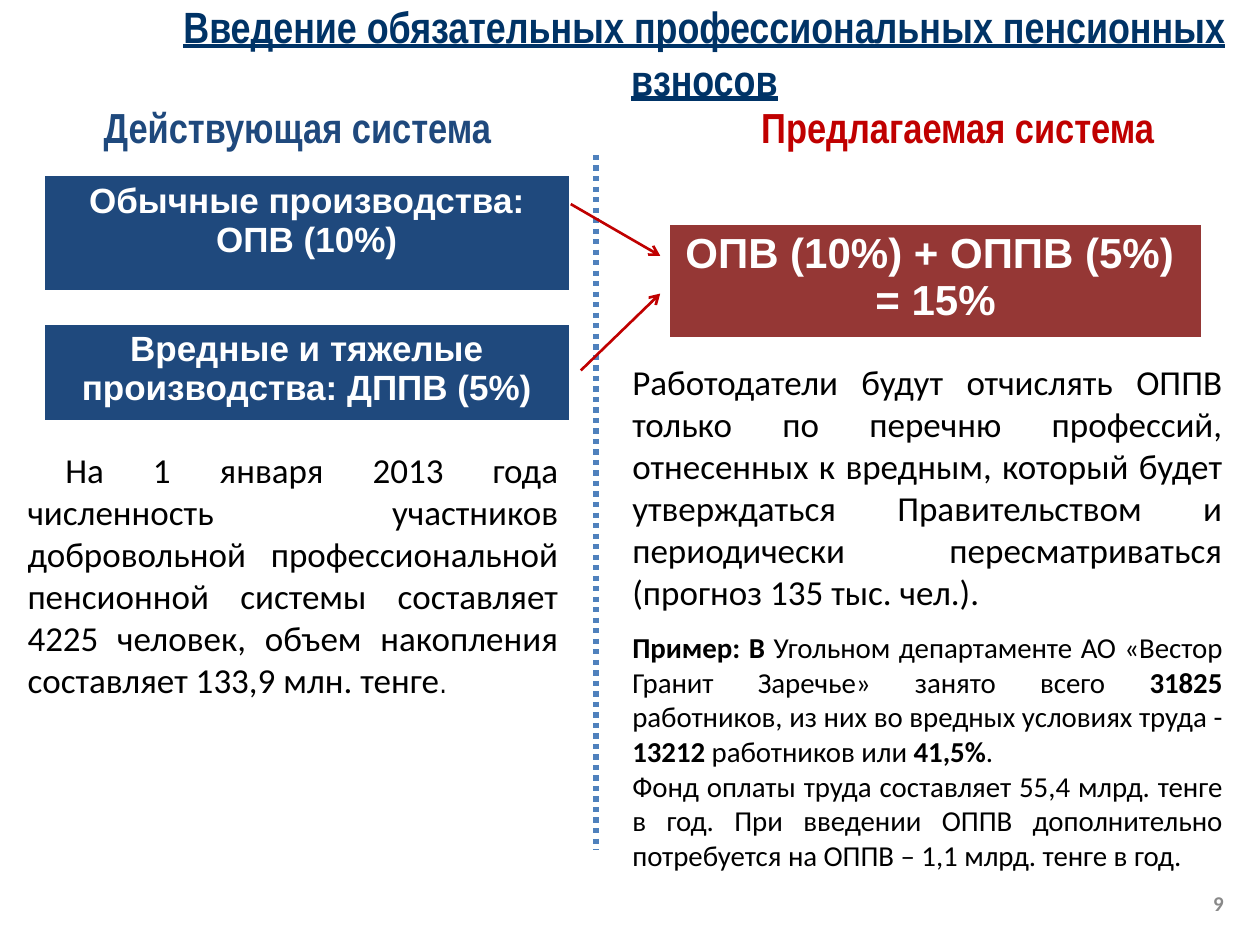
import pptx
import pptx.util
import pptx.oxml.ns
import pptx.dml.color
import pptx.enum.dml
import pptx.enum.shapes
import pptx.enum.text
from lxml import etree

Inches, Pt = pptx.util.Inches, pptx.util.Pt
rgb = pptx.dml.color.RGBColor.from_string
Align = pptx.enum.text.PP_ALIGN
Anchor = pptx.enum.text.MSO_ANCHOR

# Colours and type styles
theme = {
    "navy": "1F497D", "red": "C00000", "brick": "953735", "blue": "4F81BD",
    "title": {"name": "Arial Narrow", "size": Pt(25), "bold": True, "underline": True, "color": "003366"},
    "head": {"name": "Arial Narrow", "size": Pt(24), "bold": True},
    "cell": {"name": "Arial", "size": Pt(20), "bold": True, "color": "FFFFFF"},
    "sum": {"name": "Arial", "size": Pt(24), "bold": True, "color": "FFFFFF"},
    "body": {"name": "Calibri", "size": Pt(20), "color": "000000"},
    "dot": {"name": "Arial Narrow", "size": Pt(18), "color": "000000"},
    "note": {"name": "Calibri", "size": Pt(16.5), "color": "000000"},
    "bold": {"name": "Calibri", "size": Pt(16.5), "bold": True, "color": "000000"},
    "page": {"name": "Calibri", "size": Pt(12), "bold": True, "color": "898989"},
}


def write(par, align, *runs):
    par.alignment = align
    for text, style in runs:
        for row, line in enumerate(text.split("\n")):
            if row:
                par.add_line_break()
            run = par.add_run()
            run.text = line
            for key, value in style.items():
                if key == "color":
                    run.font.color.rgb = rgb(value)
                else:
                    setattr(run.font, key, value)


def add_box(left, top, width, height):
    box = slide.shapes.add_textbox(Inches(left), Inches(top), Inches(width), Inches(height))
    box.text_frame.word_wrap = True
    return box.text_frame


deck = pptx.Presentation()
deck.slide_width, deck.slide_height = Inches(10), Inches(7.5)
slide = deck.slides.add_slide(deck.slide_layouts[5])

# Title
title = slide.shapes.title
title.left, title.top, title.width, title.height = Inches(0), Inches(0.15), Inches(10), Inches(0.53)
frame = title.text_frame
frame.auto_size = pptx.enum.text.MSO_AUTO_SIZE.NONE
frame.vertical_anchor = Anchor.MIDDLE
par = frame.paragraphs[0]
write(par, Align.CENTER,
      ("Введение обязательных профессиональных пенсионных взносов", theme["title"]))
par.space_before = Pt(0)
props = par._p.get_or_add_pPr()
props.set("marL", str(Inches(1.18)))
props.set("indent", "0")

# Column headings
for text, left, width, tone in [
    ("Действующая система", 0.51, 3.7, "navy"),
    ("Предлагаемая система", 5.79, 3.62, "red"),
]:
    frame = add_box(left, 0.76, width, 0.51)
    write(frame.paragraphs[0], Align.CENTER, (text, theme["head"] | {"color": theme[tone]}))

# Left column text
par = add_box(0.12, 3.51, 4.41, 2.12).paragraphs[0]
write(par, Align.JUSTIFY,
      ("На 1 января 2013 года численность участников добровольной профессиональной "
       "пенсионной системы составляет 4225 человек, объем накопления составляет "
       "133,9 млн. тенге", theme["body"]),
      (".", theme["dot"]))
par._p.get_or_add_pPr().set("indent", str(Inches(0.3)))

# Right column text
note, bold = theme["note"], theme["bold"]
frame = add_box(4.92, 2.81, 4.88, 4.2)
write(frame.paragraphs[0], Align.JUSTIFY,
      ("Работодатели будут отчислять ОППВ только по перечню профессий, отнесенных "
       "к вредным, который будет утверждаться Правительством и периодически "
       "пересматриваться (прогноз 135 тыс. чел.).", theme["body"]))
par = frame.add_paragraph()
par.space_before = Pt(10)
write(par, Align.JUSTIFY,
      ("Пример: В ", bold),
      ("Угольном департаменте АО «Вестор Гранит Заречье» занято всего ", note),
      ("31825", bold),
      (" работников, из них во вредных условиях труда - ", note),
      ("13212", bold),
      (" работников или ", note),
      ("41,5%", bold),
      (".", note))
write(frame.add_paragraph(), Align.JUSTIFY,
      ("Фонд оплаты труда составляет 55,4 млрд. тенге в год. При введении ОППВ "
       "дополнительно потребуется на ОППВ – 1,1 млрд. тенге в год.", note))

# Contribution tables, one cell each
for text, left, top, width, height, tone, style in [
    ("Обычные производства: ОПВ (10%)", 0.35, 1.39, 4.17, 0.92, "navy", "cell"),
    ("Вредные и тяжелые производства: ДППВ (5%)", 0.35, 2.57, 4.17, 0.76, "navy", "cell"),
    ("ОПВ (10%) + ОППВ (5%) \n= 15%", 5.31, 1.78, 4.23, 0.87, "brick", "sum"),
]:
    grid = slide.shapes.add_table(1, 1, Inches(left), Inches(top), Inches(width), Inches(height))
    cell = grid.table.cell(0, 0)
    cell.fill.solid()
    cell.fill.fore_color.rgb = rgb(theme[tone])
    write(cell.text_frame.paragraphs[0], Align.CENTER, (text, theme[style]))

# Divider and arrows
for start, end, tone, weight, arrow in [
    ((4.73, 1.23), (4.73, 6.74), "blue", 3, False),
    ((4.61, 2.94), (5.24, 2.33), "red", 1.5, True),
    ((4.53, 1.62), (5.24, 2.03), "red", 1.5, True),
]:
    link = slide.shapes.add_connector(
        pptx.enum.shapes.MSO_CONNECTOR.STRAIGHT, *map(Inches, start + end))
    link.line.color.rgb = rgb(theme[tone])
    link.line.width = Pt(weight)
    props = link._element.spPr
    if arrow:
        tail = etree.SubElement(link.line._get_or_add_ln(), pptx.oxml.ns.qn("a:tailEnd"))
        tail.set("type", "arrow")
    else:
        link.line.dash_style = pptx.enum.dml.MSO_LINE.ROUND_DOT
    etree.SubElement(props, pptx.oxml.ns.qn("a:effectLst"))

# Page number
frame = add_box(9.02, 6.97, 0.79, 0.4)
frame.vertical_anchor = Anchor.MIDDLE
write(frame.paragraphs[0], Align.RIGHT, ("9", theme["page"]))

deck.save("out.pptx")
